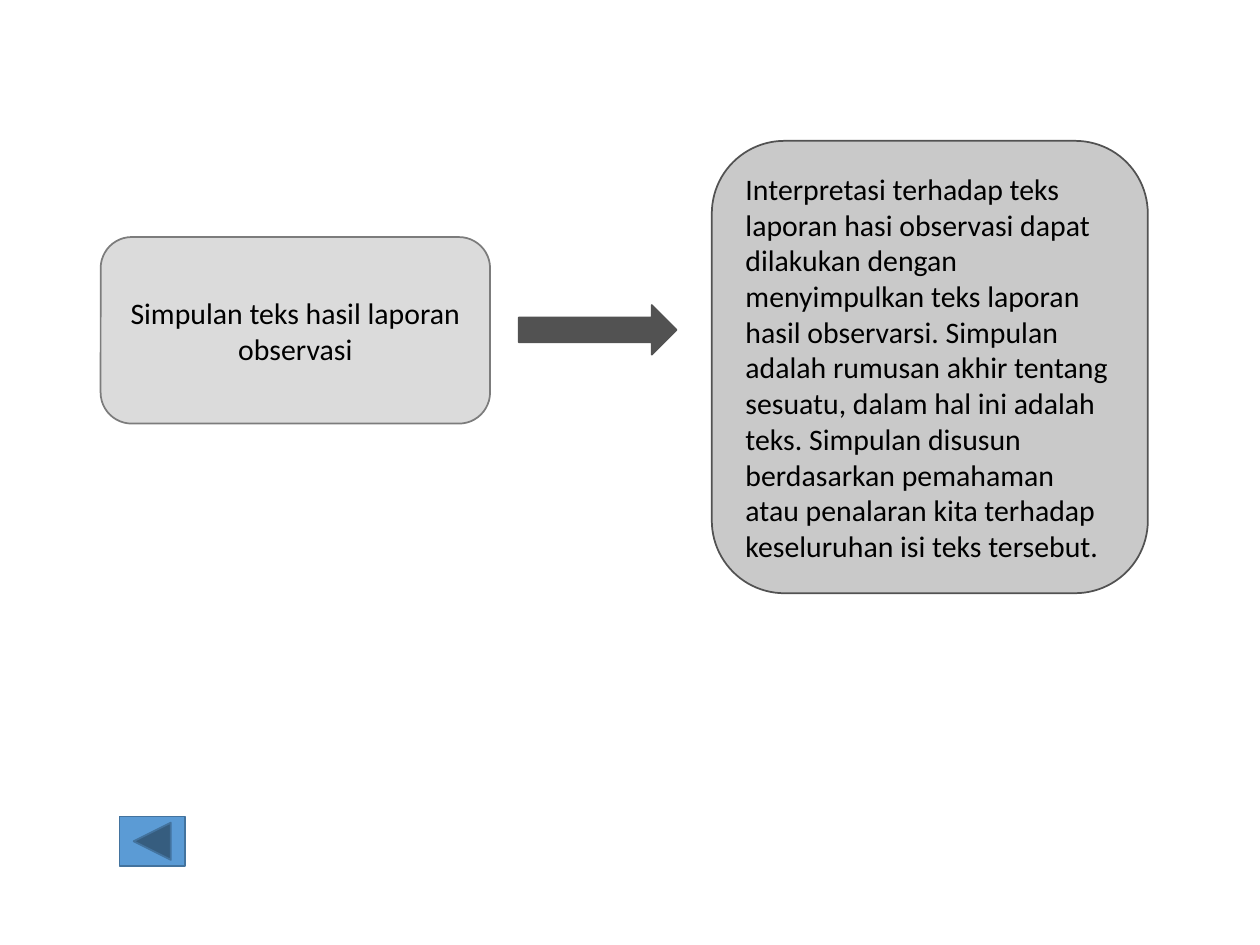
"""Build a slide linking the observation report conclusion to its explanation."""
from pptx import Presentation
from pptx.dml.color import RGBColor
from pptx.enum import shapes, text
from pptx.util import Cm, Pt

BLACK = RGBColor(0x00, 0x00, 0x00)
LIGHT_GREY = RGBColor(0xDB, 0xDB, 0xDB)
MID_GREY = RGBColor(0xC9, 0xC9, 0xC9)
EDGE_GREY = RGBColor(0x7C, 0x7C, 0x7C)
DARK_GREY = RGBColor(0x52, 0x52, 0x52)
BLUE = RGBColor(0x5B, 0x9B, 0xD5)
DARK_BLUE = RGBColor(0x43, 0x73, 0x9E)

KIND = shapes.MSO_SHAPE
ALIGN = text.PP_ALIGN

TOPIC = "Simpulan teks hasil laporan observasi"
EXPLANATION = (
    "Interpretasi terhadap teks laporan hasi observasi dapat dilakukan dengan "
    "menyimpulkan teks laporan hasil observarsi. Simpulan adalah rumusan akhir "
    "tentang sesuatu, dalam hal ini adalah teks. Simpulan disusun berdasarkan "
    "pemahaman atau penalaran kita terhadap keseluruhan isi teks tersebut."
)

ITEMS = [
    (KIND.ROUNDED_RECTANGLE, (2.03, 4.78, 7.85, 3.76), LIGHT_GREY, EDGE_GREY, TOPIC, ALIGN.CENTER),
    (KIND.RIGHT_ARROW, (10.46, 6.15, 3.18, 1), DARK_GREY, DARK_GREY, None, None),
    (KIND.ROUNDED_RECTANGLE, (14.35, 2.84, 8.79, 9.12), MID_GREY, DARK_GREY, EXPLANATION, ALIGN.LEFT),
    (KIND.ACTION_BUTTON_BACK_OR_PREVIOUS, (2.41, 16.46, 1.32, 1), BLUE, DARK_BLUE, None, None),
]


def write_text(box, words, alignment):
    frame = box.text_frame
    frame.word_wrap = True
    frame.vertical_anchor = text.MSO_ANCHOR.MIDDLE
    para = frame.paragraphs[0]
    para.alignment = alignment
    span = para.add_run()
    span.text = words
    span.font.name = "Calibri"
    span.font.size = Pt(17)
    span.font.color.rgb = BLACK


def add_item(page, kind, place, fill, edge, words, alignment):
    box = page.shapes.add_shape(kind, *map(Cm, place))
    box.shadow.inherit = False
    box.fill.solid()
    box.fill.fore_color.rgb = fill
    box.line.color.rgb = edge
    box.line.width = Pt(1)
    if words:
        write_text(box, words, alignment)


def main():
    deck = Presentation()
    deck.slide_width, deck.slide_height = Cm(25.4), Cm(19.05)
    page = deck.slides.add_slide(deck.slide_layouts[6])
    for item in ITEMS:
        add_item(page, *item)
    deck.save("out.pptx")


if __name__ == "__main__":
    main()
